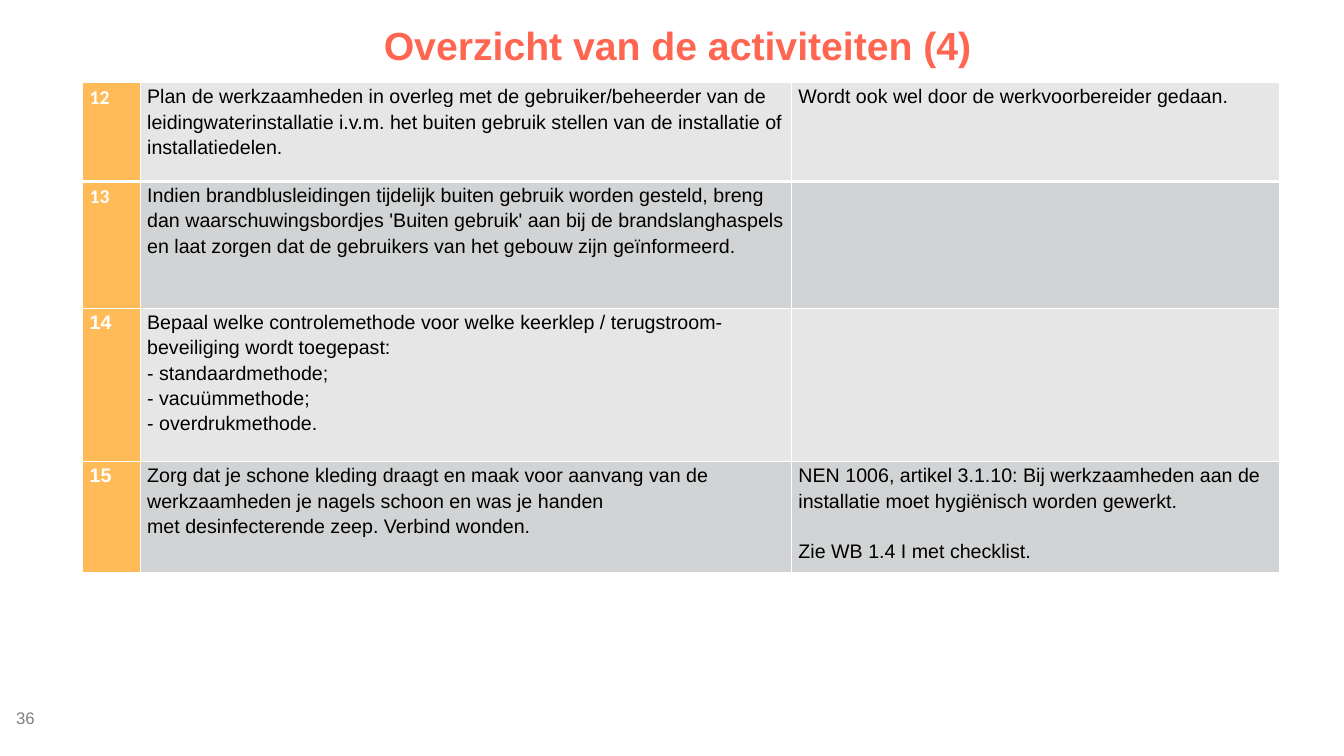
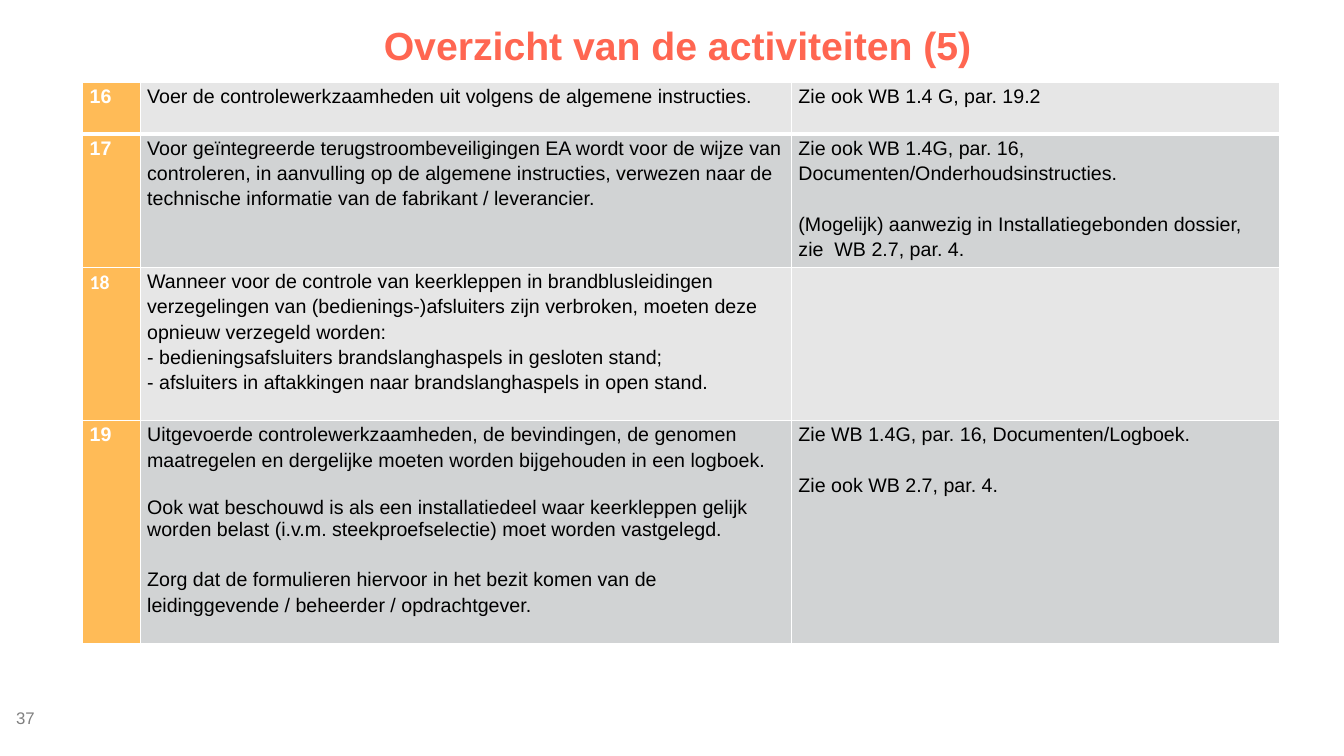
"""Build two slides with a numbered overview of activities."""
from dataclasses import dataclass
from typing import NamedTuple

from lxml.etree import SubElement
from pptx import Presentation
from pptx.dml.color import RGBColor as RGB
from pptx.enum.text import MSO_ANCHOR as Anchor, PP_ALIGN as Align
from pptx.oxml.ns import qn
from pptx.util import Inches, Pt


@dataclass(frozen=True)
class Theme:
    font: str = "Arial"
    alt_font: str = "Calibri"
    title: RGB = RGB(0xFF, 0x66, 0x51)
    text: RGB = RGB(0, 0, 0)
    white: RGB = RGB(0xFF, 0xFF, 0xFF)
    footer: RGB = RGB(0x80, 0x80, 0x80)
    number: RGB = RGB(0xFF, 0xBB, 0x57)
    bands: tuple[RGB, RGB] = (RGB(0xE6, 0xE6, 0xE6), RGB(0xD1, 0xD3, 0xD4))
    title_size: int = 28
    body_size: int = 14
    footer_size: int = 12
    thin: int = 1
    thick: int = 3


T = Theme()
COLUMNS = (0.57, 6.46, 4.84)


class Para(NamedTuple):
    text: str
    gap: int = 0
    spacing: float = 1.15


@dataclass(frozen=True)
class Activity:
    number: int
    height: float
    task: tuple[Para, ...]
    note: tuple[Para, ...] = ()
    number_font: str = T.font


@dataclass(frozen=True)
class Page:
    number: int
    title: str
    activities: tuple[Activity, ...]


PAGES = (
    Page(36, "Overzicht van de activiteiten (4)", (
        Activity(12, 0.98, (
            Para("Plan de werkzaamheden in overleg met de gebruiker/beheerder van de "
                 "leidingwaterinstallatie i.v.m. het buiten gebruik stellen van de "
                 "installatie of installatiedelen."),
        ), (Para("Wordt ook wel door de werkvoorbereider gedaan."),), T.alt_font),
        Activity(13, 1.26, (
            Para("Indien brandblusleidingen tijdelijk buiten gebruik worden gesteld, breng "
                 "dan waarschuwingsbordjes 'Buiten gebruik' aan bij de brandslanghaspels "
                 "en laat zorgen dat de gebruikers van het gebouw zijn geïnformeerd."),
        ), number_font=T.alt_font),
        Activity(14, 1.52, (
            Para("Bepaal welke controlemethode voor welke keerklep / "
                 "terugstroom-beveiliging wordt toegepast:"),
            Para("- standaardmethode;"),
            Para("- vacuümmethode;"),
            Para("- overdrukmethode."),
        )),
        Activity(15, 1.1, (
            Para("Zorg dat je schone kleding draagt en maak voor aanvang van de "
                 "werkzaamheden je nagels schoon en was je handen"),
            Para("met desinfecterende zeep. Verbind wonden."),
        ), (
            Para("NEN 1006, artikel 3.1.10: Bij werkzaamheden aan de installatie moet "
                 "hygiënisch worden gewerkt."),
            Para("Zie WB 1.4 I met checklist.", 18),
        )),
    )),
    Page(37, "Overzicht van de activiteiten (5)", (
        Activity(16, 0.51, (
            Para("Voer de controlewerkzaamheden uit volgens de algemene instructies."),
        ), (Para("Zie ook WB 1.4 G, par. 19.2"),)),
        Activity(17, 1.26, (
            Para("Voor geïntegreerde terugstroombeveiligingen EA wordt voor de wijze van "
                 "controleren, in aanvulling op de algemene instructies, verwezen naar de "
                 "technische informatie van de fabrikant / leverancier."),
        ), (
            Para("Zie ook WB 1.4G, par. 16, Documenten/Onderhoudsinstructies."),
            Para("(Mogelijk) aanwezig in Installatiegebonden dossier,", 18),
            Para("zie  WB 2.7, par. 4."),
        )),
        Activity(18, 1.52, (
            Para("Wanneer voor de controle van keerkleppen in brandblusleidingen "
                 "verzegelingen van (bedienings-)afsluiters zijn verbroken, moeten deze "
                 "opnieuw verzegeld worden:"),
            Para("- bedieningsafsluiters brandslanghaspels in gesloten stand;"),
            Para("- afsluiters in aftakkingen naar brandslanghaspels in open stand."),
        ), number_font=T.alt_font),
        Activity(19, 2.21, (
            Para("Uitgevoerde controlewerkzaamheden, de bevindingen, de genomen "
                 "maatregelen en dergelijke moeten worden bijgehouden in een logboek."),
            Para("Ook wat beschouwd is als een installatiedeel waar keerkleppen gelijk "
                 "worden belast (i.v.m. steekproefselectie) moet worden vastgelegd.", 18, 1.0),
            Para("Zorg dat de formulieren hiervoor in het bezit komen van de "
                 "leidinggevende / beheerder / opdrachtgever.", 18),
        ), (
            Para("Zie WB 1.4G, par. 16, Documenten/Logboek."),
            Para("Zie ook WB 2.7, par. 4.", 18),
        )),
    )),
)


def write(tf, paras: tuple[Para, ...], size: int, color: RGB, bold: bool = False,
          font: str = T.font, align: Align = Align.LEFT) -> None:
    for i, para in enumerate(paras):
        p = tf.add_paragraph() if i else tf.paragraphs[0]
        p.text = para.text
        p.alignment = align
        p.line_spacing = para.spacing
        p.space_before = Pt(para.gap)
        f = p.runs[0].font
        f.name, f.size, f.bold = font, Pt(size), bold
        f.color.rgb = color


def add_label(s, box: tuple[float, ...], para: Para, size: int, color: RGB,
              bold: bool = False, align: Align = Align.LEFT) -> None:
    tf = s.shapes.add_textbox(*map(Inches, box)).text_frame
    tf.word_wrap = True
    tf.vertical_anchor = Anchor.MIDDLE
    tf.margin_left = tf.margin_right = tf.margin_top = tf.margin_bottom = 0
    write(tf, (para,), size, color, bold, align=align)


def set_borders(cell, top: int, bottom: int) -> None:
    tc_pr = cell._tc.get_or_add_tcPr()
    for side, width in (("L", T.thin), ("R", T.thin), ("T", top), ("B", bottom)):
        ln = SubElement(tc_pr, qn(f"a:ln{side}"), w=str(Pt(width)))
        fill = SubElement(ln, qn("a:solidFill"))
        SubElement(fill, qn("a:srgbClr"), val=str(T.white))


def add_activities(s, activities: tuple[Activity, ...]) -> None:
    height = sum(a.height for a in activities)
    tbl = s.shapes.add_table(len(activities), len(COLUMNS), Inches(0.82), Inches(0.82),
                             Inches(sum(COLUMNS)), Inches(height)).table
    tbl.first_row = tbl.horz_banding = False
    for col, width in zip(tbl.columns, COLUMNS):
        col.width = Inches(width)
    for i, a in enumerate(activities):
        tbl.rows[i].height = Inches(a.height)
        band = T.bands[i % 2]
        contents = (
            ((Para(str(a.number)),), T.number, T.white, True, a.number_font),
            (a.task, band, T.text, False, T.font),
            (a.note, band, T.text, False, T.font),
        )
        for cell, (paras, fill, color, bold, font) in zip(tbl.rows[i].cells, contents):
            set_borders(cell, T.thick if i == 1 else T.thin, T.thick if i == 0 else T.thin)
            cell.fill.solid()
            cell.fill.fore_color.rgb = fill
            cell.margin_left = cell.margin_right = Inches(0.07)
            cell.margin_top = cell.margin_bottom = 0
            write(cell.text_frame, paras, T.body_size, color, bold, font)


def add_page(prs, page: Page) -> None:
    s = prs.slides.add_slide(prs.slide_layouts[6])
    add_label(s, (0.16, 6.92, 0.71, 0.4), Para(str(page.number), spacing=1.0),
              T.footer_size, T.footer)
    add_label(s, (0.83, 0.2, 11.78, 0.54), Para(page.title, spacing=0.9),
              T.title_size, T.title, True, Align.CENTER)
    add_activities(s, page.activities)


def main() -> None:
    prs = Presentation()
    prs.slide_width, prs.slide_height = Inches(13.33), Inches(7.5)
    for page in PAGES:
        add_page(prs, page)
    prs.save("out.pptx")


if __name__ == "__main__":
    main()
